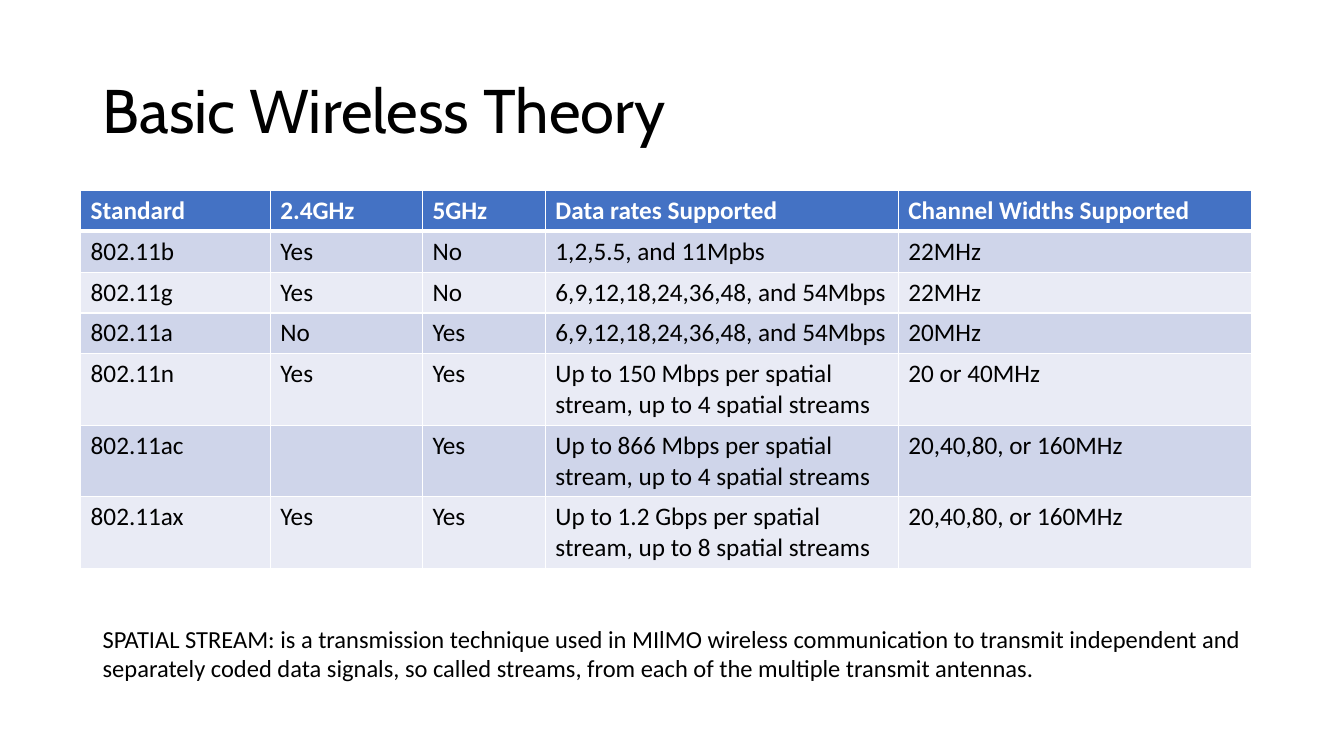
from lxml.etree import SubElement
from pptx import Presentation
from pptx.dml.color import RGBColor
from pptx.enum.text import MSO_ANCHOR
from pptx.oxml.ns import qn
from pptx.util import Inches, Pt

WHITE, BLACK, HEADER_BLUE = "FFFFFF", "000000", "4472C4"
BANDS = ("CFD5EA", "E9EBF5")
COLUMN_WIDTHS = (1.88, 1.51, 1.22, 3.5, 3.5)
LINE_HEIGHT, ROW_PADDING = 0.305, 0.1
STANDARDS = [
    ("Standard", "2.4GHz", "5GHz", "Data rates Supported", "Channel Widths Supported"),
    ("802.11b", "Yes", "No", "1,2,5.5, and 11Mpbs", "22MHz"),
    ("802.11g", "Yes", "No", "6,9,12,18,24,36,48, and 54Mbps", "22MHz"),
    ("802.11a", "No", "Yes", "6,9,12,18,24,36,48, and 54Mbps", "20MHz"),
    ("802.11n", "Yes", "Yes",
     "Up to 150 Mbps per spatial stream, up to 4 spatial streams", "20 or 40MHz"),
    ("802.11ac", "", "Yes",
     "Up to 866 Mbps per spatial stream, up to 4 spatial streams", "20,40,80, or 160MHz"),
    ("802.11ax", "Yes", "Yes",
     "Up to 1.2 Gbps per spatial stream, up to 8 spatial streams", "20,40,80, or 160MHz"),
]
SPATIAL_STREAM = (
    "SPATIAL STREAM: is a transmission technique used in MIlMO wireless communication "
    "to transmit independent and separately coded data signals, so called streams, "
    "from each of the multiple transmit antennas."
)


def rgb(color):
    return RGBColor.from_string(color)


def format_font(p, size, color, name="Calibri", bold=False):
    for r in p.runs:
        r.font.name, r.font.size, r.font.bold = name, Pt(size), bold
        r.font.color.rgb = rgb(color)


def add_text(slide, box, text, size, font, anchor=MSO_ANCHOR.TOP, line_spacing=1.0):
    tf = slide.shapes.add_textbox(*map(Inches, box)).text_frame
    tf.word_wrap = True
    tf.vertical_anchor = anchor
    p = tf.paragraphs[0]
    p.text = text
    p.line_spacing = line_spacing
    format_font(p, size, BLACK, font)


def add_borders(cell, widths):
    """Draw white cell borders; widths are points by side (L, R, T, B)."""
    tc_pr = cell._tc.get_or_add_tcPr()
    for side, width in widths.items():
        ln = SubElement(tc_pr, qn(f"a:ln{side}"), w=str(Pt(width)))
        fill = SubElement(ln, qn("a:solidFill"))
        SubElement(fill, qn("a:srgbClr"), val=WHITE)


def add_standards_table(slide, left, top):
    # Only the longest data rates wrap onto a second line.
    heights = [LINE_HEIGHT * (2 if len(row[3]) > 40 else 1) + ROW_PADDING
               for row in STANDARDS]
    size = (sum(COLUMN_WIDTHS), sum(heights))
    table = slide.shapes.add_table(len(STANDARDS), len(COLUMN_WIDTHS),
                                   *map(Inches, (left, top, *size))).table
    for column, width in zip(table.columns, COLUMN_WIDTHS):
        column.width = Inches(width)
    for i, (values, height) in enumerate(zip(STANDARDS, heights)):
        header = i == 0
        table.rows[i].height = Inches(height)
        for cell, value in zip(table.rows[i].cells, values):
            add_borders(cell, {"L": 1, "R": 1, "T": 3 if i == 1 else 1,
                               "B": 3 if header else 1})
            cell.fill.solid()
            cell.fill.fore_color.rgb = rgb(HEADER_BLUE if header else BANDS[(i - 1) % 2])
            cell.text_frame.text = value
            format_font(cell.text_frame.paragraphs[0], 18,
                        WHITE if header else BLACK, bold=header)


def main():
    prs = Presentation()
    prs.slide_width, prs.slide_height = Inches(13.33), Inches(7.5)
    slide = prs.slides.add_slide(prs.slide_layouts[6])
    add_text(slide, (0.92, 0.4, 11.5, 1.45), "Basic Wireless Theory", 44, "Cabin",
             MSO_ANCHOR.MIDDLE, 0.9)
    add_text(slide, (0.92, 6.14, 11.5, 0.96), SPATIAL_STREAM, 17.5, "Calibri")
    add_standards_table(slide, 0.8, 1.89)
    prs.save("out.pptx")


if __name__ == "__main__":
    main()
